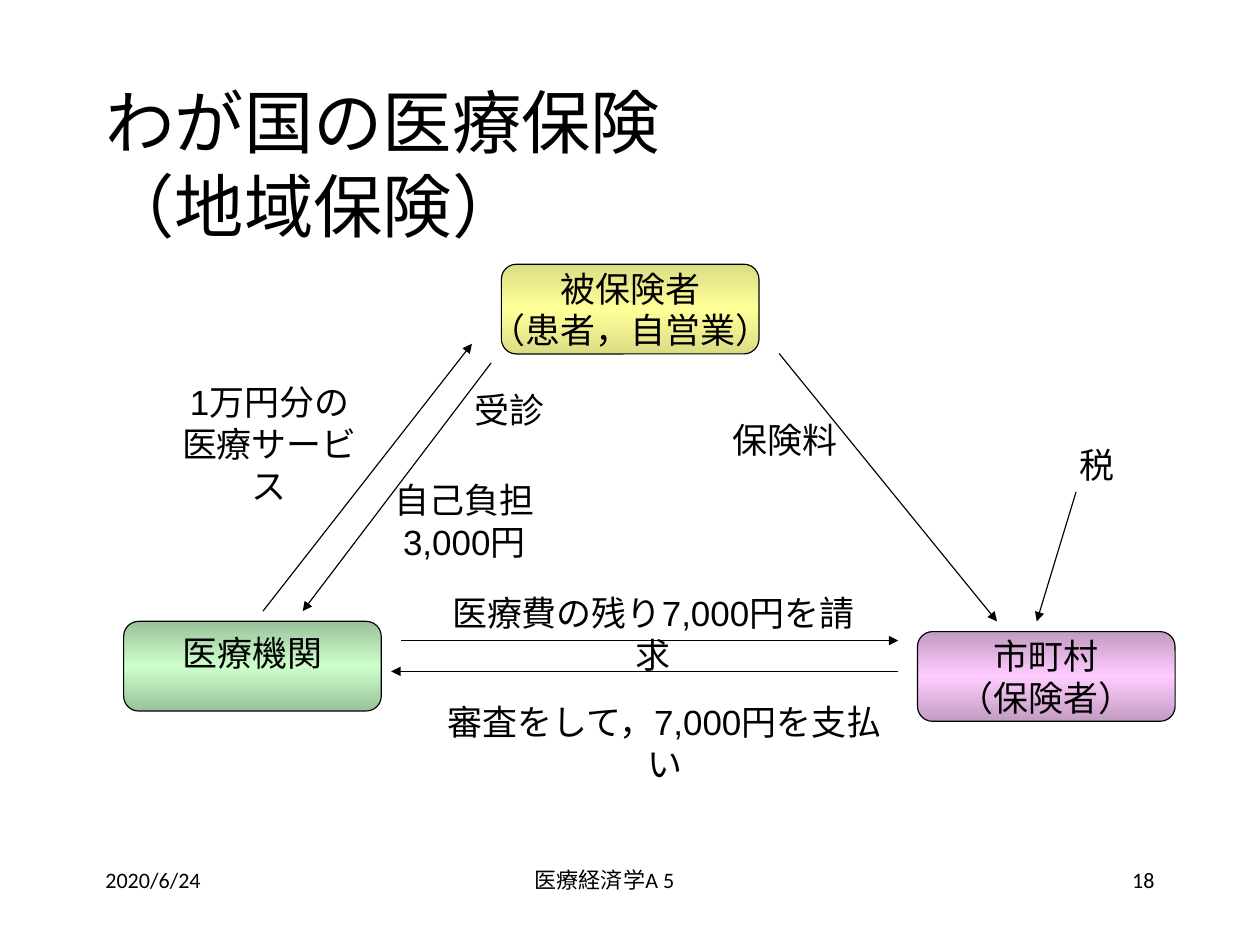
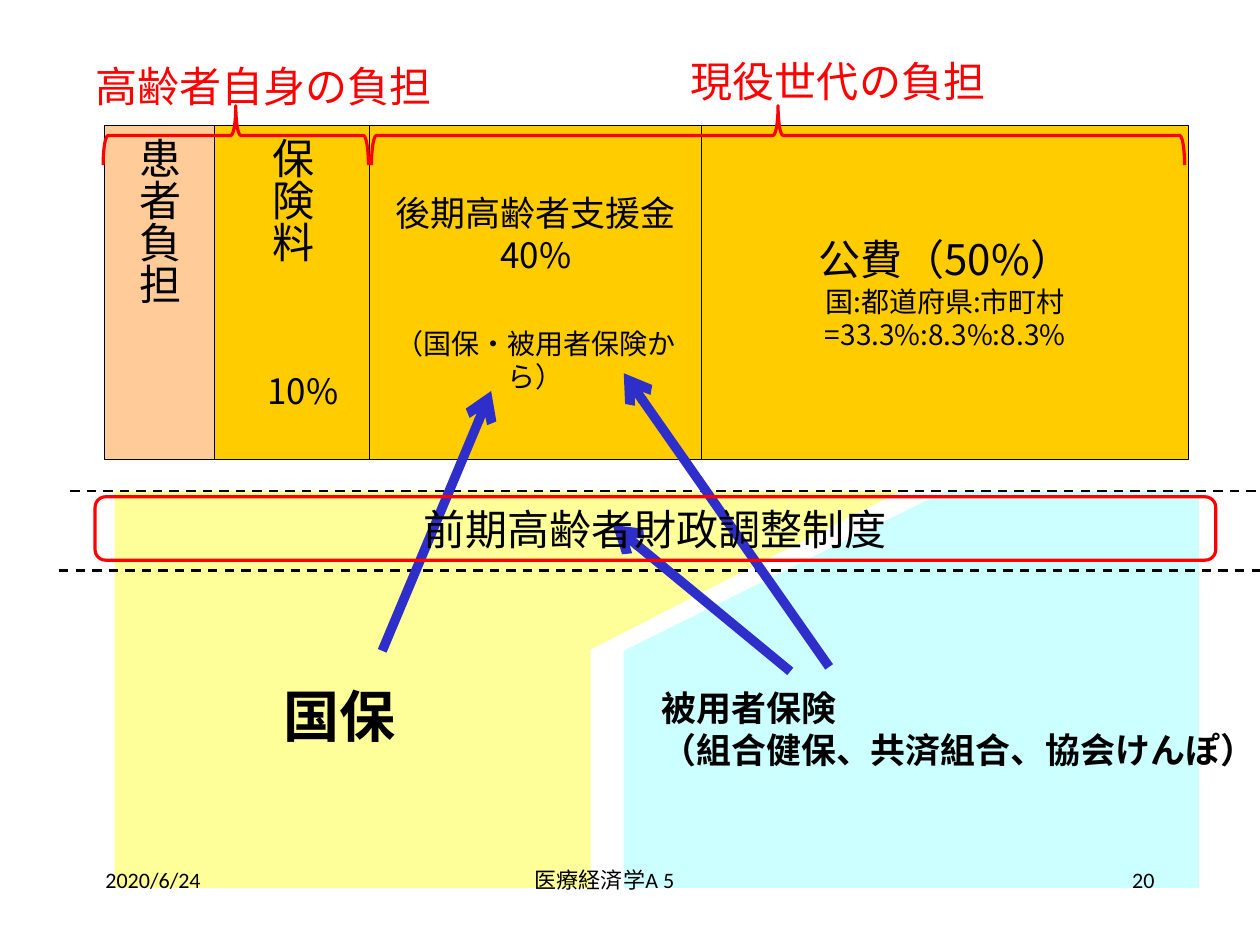
import copy
import dataclasses
import itertools

import lxml.etree
import pptx
import pptx.dml.color
import pptx.enum.dml
import pptx.enum.shapes
import pptx.enum.text
import pptx.oxml.ns
import pptx.util

Cm = pptx.util.Cm
Pt = pptx.util.Pt
qn = pptx.oxml.ns.qn
SHAPE = pptx.enum.shapes.MSO_SHAPE
ALIGN = pptx.enum.text.PP_ALIGN
ANCHOR = pptx.enum.text.MSO_ANCHOR


@dataclasses.dataclass(frozen=True)
class Theme:
    width: float = 28.22
    height: float = 21.17
    # Fonts
    title_font: str = "Calibri"
    flow_font: str = "Arial"
    cjk_font: str = "Noto Sans CJK JP"
    # Type sizes
    title: float = 44
    large: float = 35.6
    heading: float = 26.7
    body: float = 22.2
    small: float = 17.8
    footer: float = 14
    leading: float = 1.2
    # Colours; a pair is edge and middle of a gradient
    ink: str = "000000"
    red: str = "FF0000"
    blue: str = "2E2ECB"
    yellow: str = "FFFF99"
    cyan: str = "CCFFFF"
    gold: str = "FFCC00"
    peach: str = "FFCC99"
    insured: tuple = ("DCDC84", "FFFF99")
    insurer: tuple = ("C29BC2", "FFCCFF")
    provider: tuple = ("9BC29B", "CCFFCC")
    # Line widths
    thin: float = 0.75
    dashed: float = 1.5
    frame: float = 2
    thick: float = 6


T = Theme()


def rgb(value):
    return pptx.dml.color.RGBColor.from_string(value)


# Text
def set_text(tf, text, font, sizes, color=T.ink, align=ALIGN.CENTER, bold=False):
    """Fill a frame; sizes holds one size per paragraph, the last one repeats."""
    tf.text = text
    for p, size in itertools.zip_longest(tf.paragraphs, sizes, fillvalue=sizes[-1]):
        p.alignment = align
        p.line_spacing = Pt(round(size * T.leading, 1))
        for r in p.runs:
            r.font.name, r.font.size, r.font.bold = font, Pt(size), bold
            r.font.color.rgb = rgb(color)
            ea = lxml.etree.SubElement(r._r.get_or_add_rPr(), qn("a:ea"))
            ea.set("typeface", T.cjk_font)


def add_label(s, text, left, top, width, font, size=T.body, **style):
    lines = text.count("\n") + 1
    height = Pt(size * T.leading * lines)
    tf = s.shapes.add_textbox(Cm(left), Cm(top), Cm(width), height).text_frame
    tf.margin_left = tf.margin_right = tf.margin_top = tf.margin_bottom = 0
    tf.word_wrap = True
    set_text(tf, text, font, [size], **style)


def add_title(s, text):
    sp = s.shapes.title
    sp.left, sp.top, sp.width, sp.height = Cm(2.11), Cm(1.88), Cm(23.98), Cm(3.53)
    tf = sp.text_frame
    tf.auto_size = pptx.enum.text.MSO_AUTO_SIZE.NONE
    tf.vertical_anchor = ANCHOR.MIDDLE
    set_text(tf, text, T.title_font, [T.title], align=ALIGN.LEFT)


def add_footer(s, number):
    for text, left, width, align in (
        ("2020/6/24", 2.36, 5.39, ALIGN.LEFT),
        ("医療経済学A 5", 6.55, 13.98, ALIGN.CENTER),
        (number, 20.47, 5.39, ALIGN.RIGHT),
    ):
        add_label(s, text, left, 19.41, width, T.title_font, T.footer, align=align)


# Shapes
def style_shape(sp, fill=None, line=None, weight=T.thin):
    sp.shadow.inherit = False
    if fill:
        sp.fill.solid()
        sp.fill.fore_color.rgb = rgb(fill)
    else:
        sp.fill.background()
    if line:
        sp.line.color.rgb = rgb(line)
        sp.line.width = Pt(weight)
    else:
        sp.line.fill.background()


def add_box(s, kind, left, top, width, height, **style):
    sp = s.shapes.add_shape(kind, Cm(left), Cm(top), Cm(width), Cm(height))
    style_shape(sp, **style)
    sp.text_frame.vertical_anchor = ANCHOR.MIDDLE
    return sp


def add_node(s, text, left, top, shades, anchor=ANCHOR.MIDDLE):
    edge, middle = shades
    sp = add_box(s, SHAPE.ROUNDED_RECTANGLE, left, top, 5.77, 2.01, line=T.ink)
    sp.fill.gradient()
    sp.fill.gradient_angle = 270
    stops = sp.element.spPr.find(qn("a:gradFill")).find(qn("a:gsLst"))
    stops.append(copy.deepcopy(stops[0]))
    for stop, position, color in zip(
        sp.fill.gradient_stops, (0, 0.5, 1), (edge, middle, edge)
    ):
        stop.position = position
        stop.color.rgb = rgb(color)
    tf = sp.text_frame
    tf.word_wrap = False
    tf.vertical_anchor = anchor
    set_text(tf, text, T.flow_font, [T.body])


def add_brace(s, left, width, top=2.37, height=1.33):
    """Brace that points up: a left brace turned about its centre."""
    shift = (width - height) / 2
    sp = add_box(s, SHAPE.LEFT_BRACE, left + shift, top - shift, height, width,
                 line=T.red, weight=T.frame)
    sp.rotation = 90


def add_area(s, points, fill):
    corners = [(Cm(x), Cm(y)) for x, y in points]
    builder = s.shapes.build_freeform(*corners[0])
    builder.add_line_segments(corners[1:], close=True)
    style_shape(builder.convert_to_shape(), fill=fill)


def add_line(s, start, end, color=T.ink, weight=T.thin, head=None, dash=False):
    c = s.shapes.add_connector(
        pptx.enum.shapes.MSO_CONNECTOR.STRAIGHT, *map(Cm, start + end))
    c.line.color.rgb = rgb(color)
    c.line.width = Pt(weight)
    if dash:
        c.line.dash_style = pptx.enum.dml.MSO_LINE.DASH
    spPr = c.element.spPr
    if head:
        tail = lxml.etree.SubElement(spPr.find(qn("a:ln")), qn("a:tailEnd"))
        tail.set("type", head)
    lxml.etree.SubElement(spPr, qn("a:effectLst"))


# Slides
def build_flow_slide(prs):
    s = prs.slides.add_slide(prs.slide_layouts[5])
    add_title(s, "わが国の医療保険\v（地域保険）")

    # Parties
    add_node(s, "被保険者\n（患者，自営業）", 11.23, 5.92, T.insured)
    add_node(s, "市町村\n（保険者）", 20.55, 14.15, T.insurer)
    add_node(s, "医療機関", 2.77, 13.92, T.provider, ANCHOR.TOP)

    # Flows between them
    for start, end in (
        ((17.45, 7.92), (22.33, 13.92)),
        ((11.0, 8.13), (6.78, 13.69)),
        ((5.89, 13.69), (10.57, 7.7)),
        ((8.99, 14.35), (20.12, 14.35)),
        ((20.12, 15.04), (8.76, 15.04)),
        ((24.1, 11.02), (23.22, 13.92)),
    ):
        add_line(s, start, end, head="triangle")
    for text, left, top, width in (
        ("保険料", 16.31, 9.37, 2.55),
        ("1万円分の\n医療サービス", 3.76, 8.53, 4.55),
        ("受診", 10.52, 8.71, 1.8),
        ("自己負担\n3,000円", 8.7, 10.72, 3.4),
        ("医療費の残り7,000円を請求", 9.83, 13.26, 9.6),
        ("審査をして，7,000円を支払い", 9.93, 15.7, 9.91),
        ("税", 24.07, 9.93, 1.0),
    ):
        add_label(s, text, left, top, width, T.flow_font)
    add_footer(s, "18")


def add_funding_bar(s):
    left = 2.34
    for text, width, fill, sizes, vertical in (
        ("患者負担", 2.46, T.peach, [T.heading], True),
        ("保険料", 3.48, T.gold, [T.heading], True),
        ("後期高齢者支援金\n40%\n（国保・被用者保険から）", 7.44, T.gold,
         [T.body, T.body, T.small], False),
        ("公費（50%）\n国:都道府県:市町村\n=33.3%:8.3%:8.3%", 10.9, T.gold,
         [T.heading, T.small], False),
    ):
        sp = add_box(s, SHAPE.RECTANGLE, left, 2.82, width, 7.47,
                     fill=fill, line=T.ink)
        tf = sp.text_frame
        tf.word_wrap = not vertical
        set_text(tf, text, T.cjk_font, sizes)
        if vertical:
            sp.element.txBody.find(qn("a:bodyPr")).set("vert", "eaVert")
        if text.startswith("後期"):
            tf.paragraphs[-1].space_before = Pt(32)
        left += width


def build_funding_slide(prs):
    s = prs.slides.add_slide(prs.slide_layouts[6])

    # Insurance areas
    top, bottom = 11, 19.89
    add_area(s, [(2.57, top), (20.17, top), (13.23, 14.55),
                 (13.23, bottom), (2.57, bottom)], T.yellow)
    add_area(s, [(21.18, top), (26.85, top), (26.85, bottom),
                 (13.97, bottom), (13.97, 14.58)], T.cyan)
    for left, y in ((1.32, 12.78), (1.57, top)):
        add_line(s, (left, y), (T.width, y), weight=T.dashed, dash=True)

    # Funding shares
    add_funding_bar(s)
    for left, width in ((2.31, 5.94), (8.32, 18.21)):
        add_brace(s, left, width)

    # Labels
    for text, left, y, width, size, color, bold in (
        ("被用者保険\n（組合健保、共済組合、協会けんぽ）", 14.81, 15.39, 13.4,
         T.body, T.ink, True),
        ("国保", 6.35, 15.27, 3, T.large, T.ink, True),
        ("10%", 5.99, 8.28, 2, T.body, T.ink, False),
        ("高齢者自身の負担", 2.13, 1.35, 8, T.heading, T.red, False),
        ("現役世代の負担", 15.47, 1.24, 7, T.heading, T.red, False),
    ):
        add_label(s, text, left, y, width, T.cjk_font, size,
                  color=color, align=ALIGN.LEFT, bold=bold)

    # Contributions
    for start, end in (
        ((18.57, 14.94), (13.97, 8.36)),
        ((17.7, 15.04), (13.72, 11.76)),
        ((8.56, 14.58), (11.0, 8.76)),
    ):
        add_line(s, start, end, T.blue, T.thick, head="arrow")

    # Adjustment scheme
    sp = add_box(s, SHAPE.ROUNDED_RECTANGLE, 2.13, 11.13, 25.1, 1.42,
                 line=T.red, weight=T.frame)
    set_text(sp.text_frame, "前期高齢者財政調整制度", T.cjk_font, [T.heading])
    add_footer(s, "20")


def main():
    prs = pptx.Presentation()
    prs.slide_width, prs.slide_height = Cm(T.width), Cm(T.height)
    build_flow_slide(prs)
    build_funding_slide(prs)
    prs.save("out.pptx")


if __name__ == "__main__":
    main()
